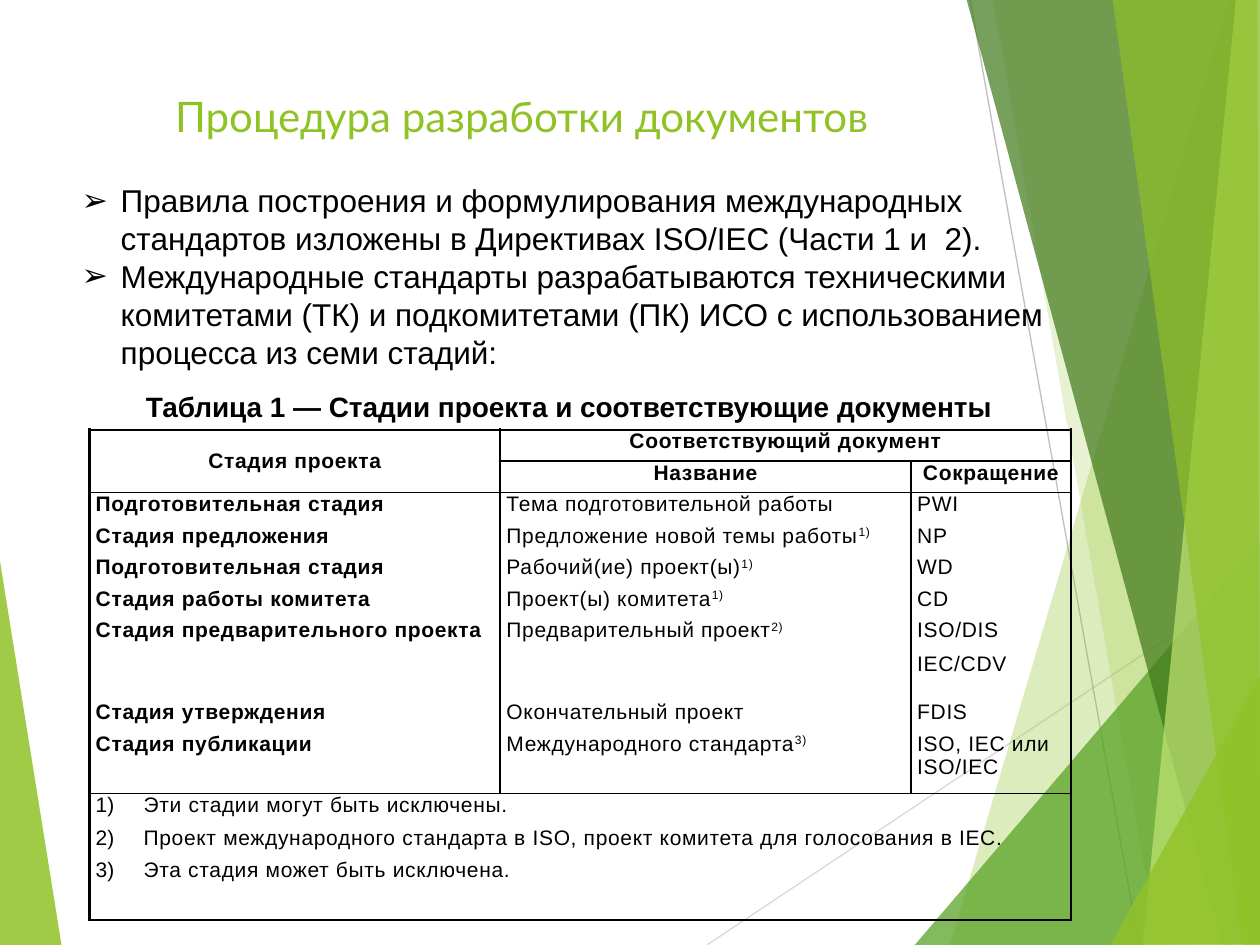
from lxml import etree
from pptx import Presentation
from pptx import util as u
from pptx.dml.color import RGBColor
from pptx.enum import shapes, text
from pptx.oxml import ns

COLORS = {
    "lime": "90C226",
    "green": "54A021",
    "dark": "3F7819",
    "pale": "C0E474",
    "light_line": "D9D9D9",
    "gray_line": "BFBFBF",
    "black": "000000",
}

# Corner points, colour and opacity in percent, from back to front
LEFT_WEDGE = ([(-0.01, 4.39), (0.49, 7.51), (-0.01, 7.5)], "lime", 85)
RIGHT_WEDGES = [
    ([(9.75, 0), (7.54, 7.5), (10.02, 7.51), (10.01, 0.01)], "lime", 30),
    ([(7.88, -0.01), (9.19, 7.5), (10.01, 7.5), (10.01, -0.01)], "lime", 20),
    ([(7.26, 7.5), (10, 4.29), (10.01, 7.5)], "green", 72),
    ([(7.67, -0.01), (9.7, 7.5), (10.01, 7.49), (10.01, -0.01)], "dark", 70),
    ([(9.81, -0.01), (9.07, 7.5), (10.01, 7.5), (10, -0.01)], "pale", 70),
    ([(8.83, -0.01), (9.86, 7.5), (10, 7.5), (9.98, -0.01)], "lime", 65),
    ([(8.81, 7.5), (10.01, 5.35), (10.01, 7.49)], "lime", 80),
]

BULLETS = [
    "Правила построения и формулирования международных стандартов "
    "изложены в Директивах ISO/IEC (Части 1 и  2).",
    "Международные стандарты разрабатываются техническими комитетами (ТК) и "
    "подкомитетами (ПК) ИСО с использованием процесса из семи стадий:",
]

# Stage, document, footnote mark, abbreviations
STAGES = [
    ("Подготовительная стадия", "Тема подготовительной работы", "", ["PWI"]),
    ("Стадия предложения", "Предложение новой темы работы", "1)", ["NP"]),
    ("Подготовительная стадия", "Рабочий(ие) проект(ы)", "1)", ["WD"]),
    ("Стадия работы комитета", "Проект(ы) комитета", "1)", ["CD"]),
    ("Стадия предварительного проекта", "Предварительный проект", "2)", ["ISO/DIS", "IEC/CDV"]),
    ("Стадия утверждения", "Окончательный проект", "", ["FDIS"]),
    ("Стадия публикации", "Международного стандарта", "3)", ["ISO, IEC или ISO/IEC"]),
]
NOTES = [
    "Эти стадии могут быть исключены.",
    "Проект международного стандарта в ISO, проект комитета для голосования в IEC.",
    "Эта стадия может быть исключена.",
]
COLUMN_WIDTHS = [3.26, 3.26, 1.27]
ROW_HEIGHTS = [0.25] * 6 + [0.65, 0.25, 0.49, 1]
HEADER_ROWS = 2
NOTES_ROW = len(ROW_HEIGHTS) - 1


def rgb(name):
    return RGBColor.from_string(COLORS[name])


def add_child(parent, tag, **attributes):
    return etree.SubElement(parent, ns.qn(tag), attributes)


def add_wedge(slide, points, color, opacity):
    corners = [(u.Inches(x), u.Inches(y)) for x, y in points]
    builder = slide.shapes.build_freeform(*corners[0])
    builder.add_line_segments(corners[1:], close=True)
    shape = builder.convert_to_shape()
    shape.shadow.inherit = False
    shape.fill.solid()
    shape.fill.fore_color.rgb = rgb(color)
    shape.line.fill.background()
    fill_color = shape.fill._xPr.find(".//" + ns.qn("a:srgbClr"))
    add_child(fill_color, "a:alpha", val=str(opacity * 1000))


def add_line(slide, start, end, color):
    ends = [u.Inches(value) for value in (*start, *end)]
    line = slide.shapes.add_connector(shapes.MSO_CONNECTOR.STRAIGHT, *ends)
    line.line.color.rgb = rgb(color)
    line.line.width = u.Pt(0.75)
    add_child(line._element.spPr, "a:effectLst")


def add_run(paragraph, words, size, font="Arial", color="black", bold=False):
    run = paragraph.add_run()
    run.text = words
    run.font.size = u.Pt(size)
    run.font.name = font
    run.font.bold = bold
    run.font.color.rgb = rgb(color)
    return run


def add_table_run(paragraph, words, bold=False, raised=False):
    properties = add_run(paragraph, words, 12, bold=bold).font._element
    properties.set("spc", "40")
    if raised:
        properties.set("baseline", "30000")


def set_bullet(paragraph, indent, tag, **attributes):
    properties = paragraph._p.get_or_add_pPr()
    properties.set("marL", str(u.Inches(indent)))
    properties.set("indent", str(u.Inches(-indent)))
    add_child(properties, "a:buFont", typeface="Arial")
    add_child(properties, tag, **attributes)


def each_paragraph(frame, items):
    """Yield a paragraph of the frame with each item."""
    for index, item in enumerate(items):
        yield (frame.add_paragraph() if index else frame.paragraphs[0]), item


def add_text_box(slide, left, top, width, height):
    box = slide.shapes.add_textbox(*map(u.Inches, (left, top, width, height)))
    box.text_frame.word_wrap = True
    return box.text_frame


def row_line_width(boundary, column):
    """Width in points of the line above row number `boundary`."""
    if boundary in (0, NOTES_ROW + 1):
        return 1.5
    ruled = boundary in (HEADER_ROWS, NOTES_ROW) or (boundary == 1 and column > 0)
    return 1 if ruled else 0


def column_line_width(boundary):
    return 1.5 if boundary in (0, len(COLUMN_WIDTHS)) else 1


def set_borders(cell, row, column):
    widths = {
        "a:lnL": column_line_width(column),
        "a:lnR": column_line_width(column + cell.span_width),
        "a:lnT": row_line_width(row, column),
        "a:lnB": row_line_width(row + cell.span_height, column),
    }
    properties = cell._tc.get_or_add_tcPr()
    for tag, width in widths.items():
        border = add_child(properties, tag, w=str(u.Pt(width)))
        if width:
            fill = add_child(border, "a:solidFill")
            add_child(fill, "a:srgbClr", val=COLORS["black"])
        else:
            add_child(border, "a:noFill")


def fill_header(table):
    titles = {(0, 0): "Стадия проекта", (0, 1): "Соответствующий документ",
              (1, 1): "Название", (1, 2): "Сокращение"}
    for position, title in titles.items():
        paragraph = table.cell(*position).text_frame.paragraphs[0]
        paragraph.alignment = text.PP_ALIGN.CENTER
        paragraph.space_after = u.Pt(3)
        add_table_run(paragraph, title, bold=True)
    table.cell(0, 0).vertical_anchor = text.MSO_ANCHOR.MIDDLE


def fill_stages(table):
    for row, (stage, document, mark, abbreviations) in enumerate(STAGES, HEADER_ROWS):
        for column, lines in enumerate(([stage], [document], abbreviations)):
            frame = table.cell(row, column).text_frame
            for paragraph, line in each_paragraph(frame, lines):
                paragraph.space_before = u.Pt(3 if line != lines[0] else 0)
                paragraph.space_after = u.Pt(3)
                add_table_run(paragraph, line, bold=column == 0)
        if mark:
            add_table_run(table.cell(row, 1).text_frame.paragraphs[0], mark, raised=True)


def fill_notes(table):
    for paragraph, note in each_paragraph(table.cell(NOTES_ROW, 0).text_frame, NOTES):
        set_bullet(paragraph, 0.38, "a:buAutoNum", type="arabicParenR")
        paragraph.alignment = text.PP_ALIGN.JUSTIFY
        paragraph.space_after = u.Pt(5)
        add_table_run(paragraph, note)


def add_stage_table(slide):
    frame = slide.shapes.add_table(
        len(ROW_HEIGHTS), len(COLUMN_WIDTHS), u.Inches(0.71), u.Inches(3.41),
        u.Inches(sum(COLUMN_WIDTHS)), u.Inches(sum(ROW_HEIGHTS)))
    table = frame.table
    table.first_row = table.horz_banding = False
    for column, width in zip(table.columns, COLUMN_WIDTHS):
        column.width = u.Inches(width)
    for row, height in zip(table.rows, ROW_HEIGHTS):
        row.height = u.Inches(height)
    for first, last in (((0, 0), (1, 0)), ((0, 1), (0, 2)), ((NOTES_ROW, 0), (NOTES_ROW, 2))):
        table.cell(*first).merge(table.cell(*last))
    for row in range(len(ROW_HEIGHTS)):
        for column in range(len(COLUMN_WIDTHS)):
            cell = table.cell(row, column)
            cell.margin_left = cell.margin_right = u.Inches(0.05)
            cell.margin_top = cell.margin_bottom = 0
            set_borders(cell, row, column)
            cell.fill.background()
    fill_header(table)
    fill_stages(table)
    fill_notes(table)


def main():
    presentation = Presentation()
    presentation.slide_width, presentation.slide_height = u.Inches(10), u.Inches(7.5)
    slide = presentation.slides.add_slide(presentation.slide_layouts[6])

    add_wedge(slide, *LEFT_WEDGE)
    add_line(slide, (5.61, 7.5), (10.01, 4.57), "light_line")
    add_line(slide, (7.7, 0), (9.04, 7.5), "gray_line")
    for wedge in RIGHT_WEDGES:
        add_wedge(slide, *wedge)

    title = add_text_box(slide, 0.67, 0.67, 6.94, 0.64).paragraphs[0]
    title.alignment = text.PP_ALIGN.CENTER
    add_run(title, "Процедура разработки документов", 24, "Lato", "lime")

    add_stage_table(slide)
    caption = add_text_box(slide, 1.06, 3.04, 7.09, 0.37)
    caption.vertical_anchor = text.MSO_ANCHOR.MIDDLE
    add_run(caption.paragraphs[0], "Таблица 1 — Стадии проекта и соответствующие документы",
            16, bold=True)
    rules = add_text_box(slide, 0.55, 1.39, 8.39, 1.62)
    for paragraph, rule in each_paragraph(rules, BULLETS):
        set_bullet(paragraph, 0.31, "a:buChar", char="➢")
        add_run(paragraph, rule, 18)

    presentation.save("out.pptx")


if __name__ == "__main__":
    main()
